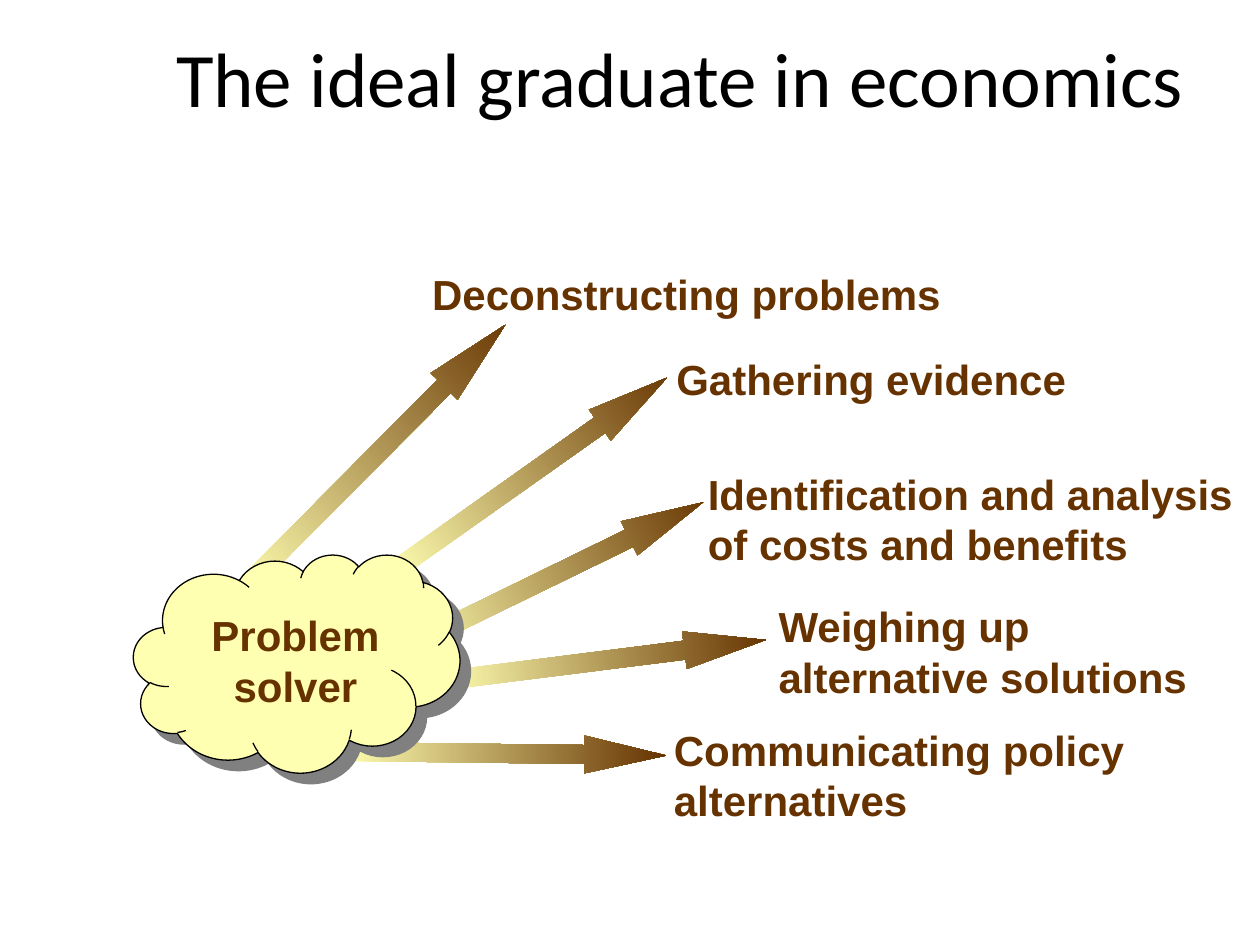
from dataclasses import dataclass

from lxml import etree
from pptx import Presentation
from pptx.dml.color import RGBColor
from pptx.enum.shapes import MSO_SHAPE
from pptx.enum.text import MSO_ANCHOR, MSO_AUTO_SIZE, PP_ALIGN
from pptx.oxml.ns import qn
from pptx.util import Pt

ARROW, CLOUD = MSO_SHAPE.RIGHT_ARROW, MSO_SHAPE.CLOUD
MIDDLE, GROW = MSO_ANCHOR.MIDDLE, MSO_AUTO_SIZE.SHAPE_TO_FIT_TEXT
LEFT, CENTER = PP_ALIGN.LEFT, PP_ALIGN.CENTER
TITLE_ONLY = 5


@dataclass
class Theme:
    brown: str = "663300"
    cream: str = "FFFFB1"
    black: str = "000000"
    grey: str = "808080"
    head: str = "Calibri"
    body: str = "Arial"
    head_size: int = 44
    body_size: int = 24


class Deck:
    def __init__(self, theme):
        self.theme = theme
        self.prs = Presentation()
        self.prs.slide_width, self.prs.slide_height = Pt(720), Pt(540)
        self.slide = self.prs.slides.add_slide(self.prs.slide_layouts[TITLE_ONLY])

    def style(self, frame, face, size, color, align, bold=False):
        para = frame.paragraphs[0]
        para.alignment = align
        font = para.runs[0].font
        font.name, font.size, font.bold = face, Pt(size), bold
        font.color.rgb = RGBColor.from_string(color)

    def title(self, text, x, y, w, h):
        t = self.theme
        box = self.slide.shapes.title
        box.left, box.top, box.width, box.height = Pt(x), Pt(y), Pt(w), Pt(h)
        box.text_frame.text = text
        box.text_frame.vertical_anchor = MIDDLE
        self.style(box.text_frame, t.head, t.head_size, t.black, CENTER)

    def label(self, text, x, y, w, h, align=LEFT):
        t = self.theme
        frame = self.slide.shapes.add_textbox(Pt(x), Pt(y), Pt(w), Pt(h)).text_frame
        frame.word_wrap = True
        frame.auto_size = GROW
        frame.text = text
        self.style(frame, t.body, t.body_size, t.brown, align, bold=True)

    def shape(self, kind, x, y, w, h):
        item = self.slide.shapes.add_shape(kind, Pt(x), Pt(y), Pt(w), Pt(h))
        item.shadow.inherit = False
        return item

    def arrow(self, x, y, size, turn, tip):
        item = self.shape(ARROW, x, y, size, 21.6)
        item.rotation = turn
        item.adjustments[1] = tip
        item.line.fill.background()
        item.fill.gradient()
        item.fill.gradient_angle = 0
        shades = (self.theme.cream, self.theme.brown)
        for stop, place, shade in zip(item.fill.gradient_stops, (0, 1), shades):
            stop.position = place
            stop.color.rgb = RGBColor.from_string(shade)

    def cloud(self, x, y, w, h):
        t = self.theme
        item = self.shape(CLOUD, x, y, w, h)
        item.fill.solid()
        item.fill.fore_color.rgb = RGBColor.from_string(t.cream)
        item.line.color.rgb = RGBColor.from_string(t.black)
        item.line.width = Pt(0.75)
        # Hard shadow towards the lower right
        effects = item._element.spPr.find(qn("a:effectLst"))
        shade = etree.SubElement(effects, qn("a:outerShdw"), blurRad="0",
                                 dist=str(Pt(8.5)), dir=str(45 * 60000),
                                 algn="ctr", rotWithShape="0")
        etree.SubElement(shade, qn("a:srgbClr"), val=t.grey)


# Skill text and its box, then arrow left, top, length, turn and tip ratio
SKILLS = [
    ("Communicating policy alternatives", (378, 410.4, 281.5, 64.8),
     (195.8, 419.8, 185, 0.7, 2.17)),
    ("Gathering evidence", (379.4, 198.7, 309.6, 36),
     (213.1, 258.5, 185, 324.7, 2.17)),
    ("Weighing up alternative solutions", (437.8, 339.8, 281.5, 64.8),
     (253.4, 366.5, 185, 352.8, 2.17)),
    ("Identification and analysis of costs and benefits",
     (397.4, 264.2, 322.6, 64.8), (226.1, 316.8, 185, 334, 2.17)),
    ("Deconstructing problems", (239.8, 149.8, 317.5, 38.2),
     (113.8, 247.7, 205.2, 314.8, 2.29)),
]


def main():
    deck = Deck(Theme())
    deck.title("The ideal graduate in economics", 87.8, 10.8, 601.9, 66.2)

    # Skills, each with its arrow
    for text, box, arrow in SKILLS:
        deck.label(text, *box)
        deck.arrow(*arrow)

    # Cloud in front of the arrow tails
    deck.cloud(76.3, 316.8, 186.5, 124.6)
    deck.label("Problem solver", 82.1, 344.9, 173.5, 64.8, CENTER)

    deck.prs.save("out.pptx")


if __name__ == "__main__":
    main()
